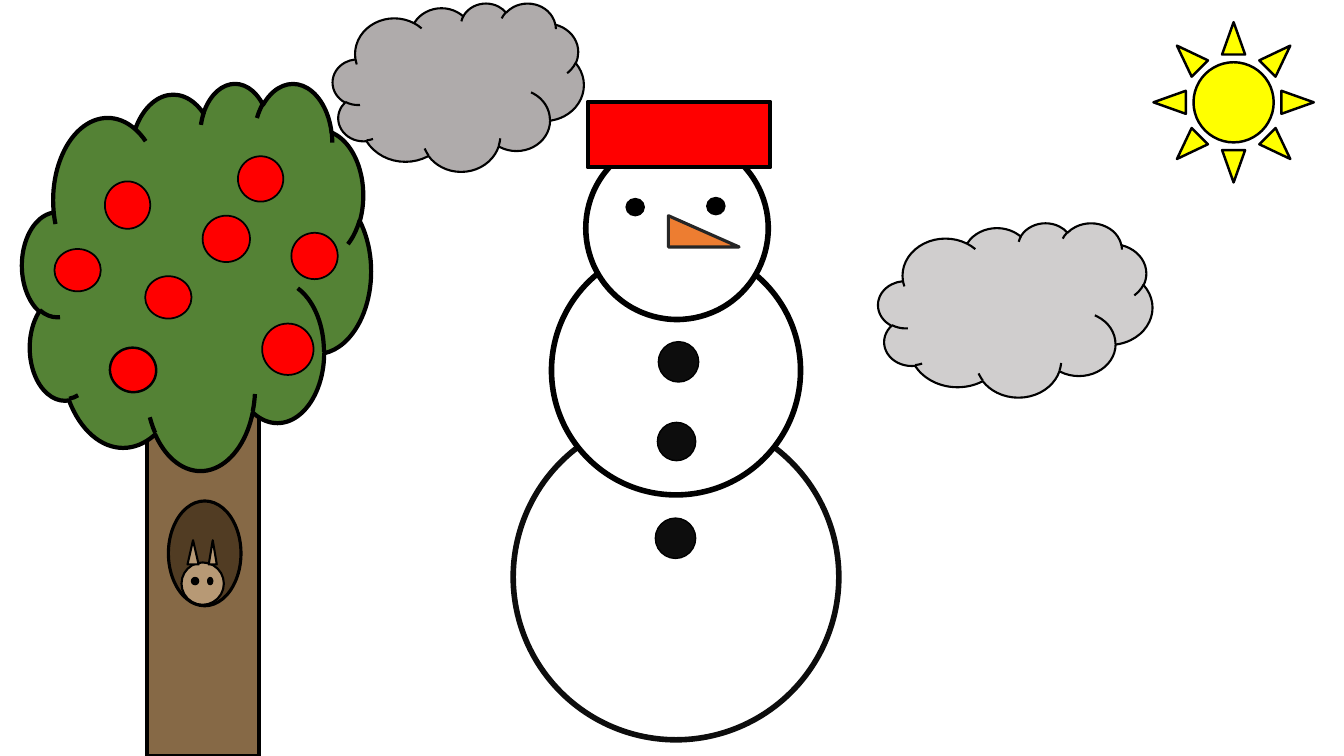
import pptx
import pptx.util
import pptx.dml.color
import pptx.enum.shapes
from dataclasses import dataclass

PX = 9144  # EMU per px, 100 px to the inch
KIND = pptx.enum.shapes.MSO_SHAPE


@dataclass(frozen=True)
class Theme:
    black: str = "000000"
    coal: str = "0D0D0D"
    snow: str = "FFFFFF"
    red: str = "FF0000"
    nose: str = "ED7D31"
    edge: str = "262626"
    bark: str = "866946"
    leaf: str = "548235"
    hole: str = "513C23"
    fur: str = "B79975"
    sun: str = "FFFF00"
    dark: str = "AFABAB"
    pale: str = "D0CECE"


THEME = Theme()


def color(code):
    return pptx.dml.color.RGBColor.from_string(code)


def draw(slide, kind, box, part, fill, width, line=THEME.black):
    """Place a part, given relative to the corner of its box."""
    left, top, wide, high = part
    rect = (box[0] + left, box[1] + top, wide, high)
    shape = slide.shapes.add_shape(kind, *(n * PX for n in rect))
    shape.shadow.inherit = False
    shape.fill.solid()
    shape.fill.fore_color.rgb = color(fill)
    shape.line.color.rgb = color(line)
    shape.line.width = pptx.util.Pt(width)
    return shape


def snowman(slide, box):
    # Body, from the base up to the head
    balls = [(0, 310, 323, THEME.coal), (38, 143, 247, THEME.black),
             (72, 35, 181, THEME.black)]
    for left, top, size, line in balls:
        draw(slide, KIND.OVAL, box, (left, top, size, size), THEME.snow, 4, line)

    # Face
    for left, top in [(112, 96), (192, 95)]:
        draw(slide, KIND.OVAL, box, (left, top, 18, 17), THEME.black, 1)
    draw(slide, KIND.RIGHT_TRIANGLE, box, (154, 113, 70, 31),
         THEME.nose, 2.25, THEME.edge)

    # Buttons
    for left, top, size in [(144, 238, 40), (143, 318, 38), (141, 413, 40)]:
        draw(slide, KIND.OVAL, box, (left, top, size, size), THEME.coal, 1)

    # Hat
    draw(slide, KIND.RECTANGLE, box, (74, 0, 181, 65), THEME.red, 3)


def tree(slide, box):
    # Trunk and crown
    draw(slide, KIND.RECTANGLE, box, (124, 266, 111, 402), THEME.bark, 3)
    draw(slide, KIND.CLOUD, box, (0, 0, 346, 384), THEME.leaf, 3)

    # Apples
    apples = [(82, 98, 45, 47), (214, 73, 45, 45), (122, 192, 46, 42),
              (32, 165, 46, 42), (267, 149, 46, 46), (238, 239, 51, 51),
              (179, 132, 47, 46)]
    for apple in apples:
        draw(slide, KIND.OVAL, box, apple, THEME.red, 1.25)
    tilted = draw(slide, KIND.OVAL, box, (87, 263, 46, 44), THEME.red, 1.75)
    tilted.rotation = 12.6


def hollow(slide, box):
    # Hole in the trunk
    draw(slide, KIND.OVAL, box, (0, 0, box[2], box[3]), THEME.hole, 2.25)

    # Squirrel: face, ears, eyes
    draw(slide, KIND.OVAL, box, (13, 61, 42, 42), THEME.fur, 1.5)
    for left, wide in [(19, 11), (40, 8)]:
        draw(slide, KIND.ISOSCELES_TRIANGLE, box, (left, 39, wide, 24),
             THEME.fur, 1.5)
    for left, wide in [(23, 7), (39, 5)]:
        draw(slide, KIND.OVAL, box, (left, 76, wide, 7), THEME.black, 1)


def sky(slide, box):
    # Sun and clouds
    draw(slide, KIND.SUN, box, (1144, 22, 159, 159), THEME.sun, 1.75)
    draw(slide, KIND.CLOUD, box, (330, 3, 249, 167), THEME.dark, 1.5)
    draw(slide, KIND.CLOUD, box, (871, 221, 272, 173), THEME.pale, 1.5)


def main():
    deck = pptx.Presentation()
    deck.slide_width = 1333 * PX
    deck.slide_height = 750 * PX
    slide = deck.slides.add_slide(deck.slide_layouts[6])
    snowman(slide, (509, 101, 323, 633))
    tree(slide, (22, 82, 346, 668))
    sky(slide, (0, 0, 1333, 750))
    hollow(slide, (167, 497, 72, 104))
    deck.save("out.pptx")


if __name__ == "__main__":
    main()
